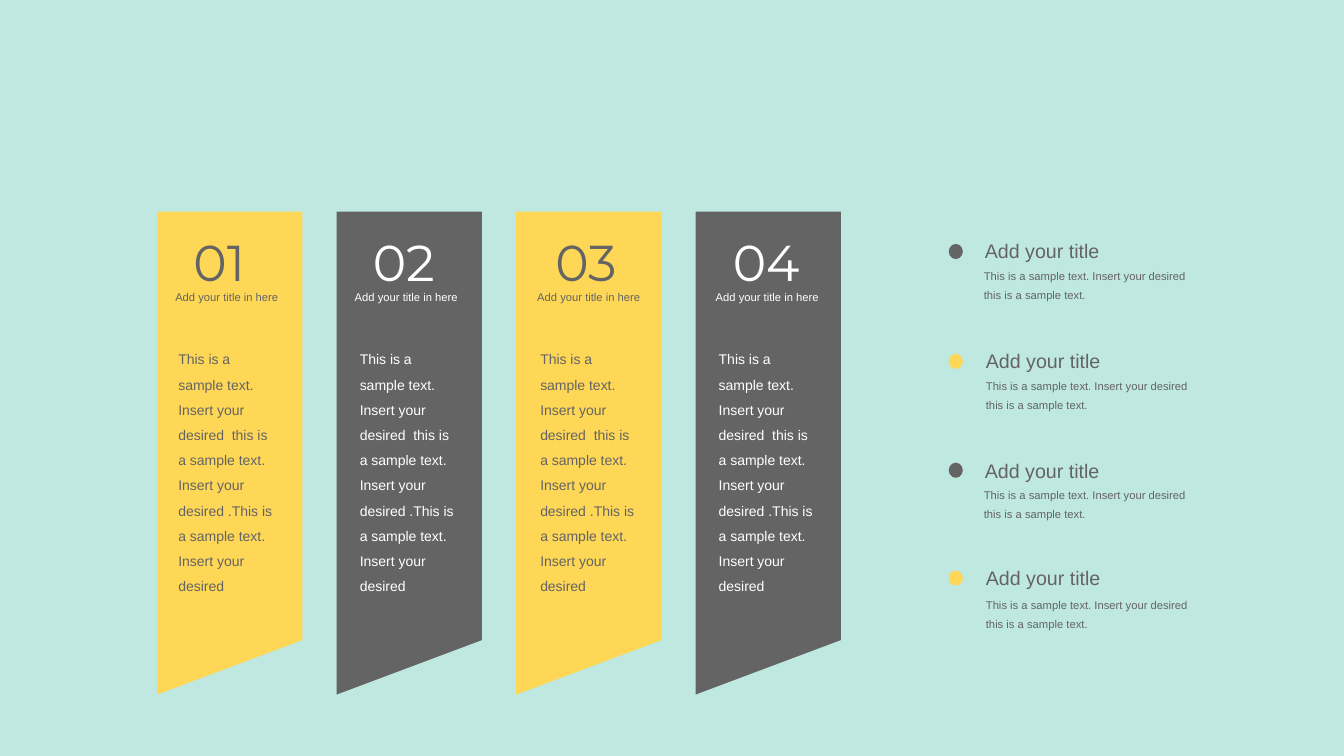
from pptx import Presentation
from pptx.dml.color import RGBColor
from pptx.enum.shapes import MSO_SHAPE as SHAPE
from pptx.enum.text import MSO_ANCHOR as ANCHOR, MSO_AUTO_SIZE as AUTO, PP_ALIGN as ALIGN
from pptx.util import Inches, Pt

MINT = RGBColor(0xBF, 0xE8, 0xE0)
YELLOW = RGBColor(0xFE, 0xD7, 0x56)
GRAY = RGBColor(0x64, 0x64, 0x64)
WHITE = RGBColor(0xFF, 0xFF, 0xFF)

BANNER_TITLE = "Add your title in here"
BANNER_TEXT = ("This is a sample text. Insert your desired  this is a sample text. "
               "Insert your desired .This is a sample text. Insert your desired")
# number, lefts of number, title and text, panel colour, text colour
BANNERS = [
    ("01", 1.82, 1.64, 1.67, YELLOW, GRAY),
    ("02", 3.60, 3.42, 3.47, GRAY, WHITE),
    ("03", 5.41, 5.23, 5.26, YELLOW, GRAY),
    ("04", 7.17, 7.00, 7.03, GRAY, WHITE),
]
ITEM_TITLE = "Add your title"
ITEM_TEXT = "This is a sample text. Insert your desired  this is a sample text."
# dot colour, tops of dot, title and text, lefts of title and text
ITEMS = [
    (GRAY, 2.42, 2.32, 2.56, 9.67, 9.66),
    (YELLOW, 3.51, 3.41, 3.65, 9.68, 9.68),
    (GRAY, 4.59, 4.50, 4.73, 9.67, 9.66),
    (YELLOW, 5.66, 5.57, 5.82, 9.68, 9.68),
]

SLIDE_W, SLIDE_H = 13.33, 7.5
BANNER_LEFT, BANNER_TOP, BANNER_STEP = 1.56, 2.10, 1.78
BANNER_W, SHORT_SIDE, LONG_SIDE = 1.44, 4.25, 4.79
DOT_LEFT = 9.41


def paint(shape, color):
    shape.shadow.inherit = False
    shape.fill.solid()
    shape.fill.fore_color.rgb = color
    shape.line.fill.background()


def add_filled(s, kind, box, color):
    sp = s.shapes.add_shape(kind, *map(Inches, box))
    paint(sp, color)
    return sp


def add_text(s, text, box, size, color, font="Arial", spacing=None, fill=None):
    """Add text, on a filled rectangle if fill is given; it wraps only with a spacing."""
    if fill:
        sp = add_filled(s, SHAPE.RECTANGLE, box, fill)
    else:
        sp = s.shapes.add_textbox(*map(Inches, box))
    tf = sp.text_frame
    layout = {"word_wrap": spacing is not None, "auto_size": AUTO.SHAPE_TO_FIT_TEXT,
              "vertical_anchor": ANCHOR.TOP}
    for name, value in layout.items():
        setattr(tf, name, value)
    p = tf.paragraphs[0]
    p.alignment = ALIGN.LEFT
    if spacing:
        p.line_spacing = Pt(spacing)
    r = p.add_run()
    r.text = text
    for name, value in {"name": font, "size": Pt(size)}.items():
        setattr(r.font, name, value)
    r.font.color.rgb = color


def add_banner(s, index, number, number_x, title_x, text_x, fill, color):
    x, y = BANNER_LEFT + index * BANNER_STEP, BANNER_TOP
    right = x + BANNER_W
    outline = [(right, y + SHORT_SIDE), (x, y + LONG_SIDE), (x, y), (right, y)]
    points = [(Inches(px), Inches(py)) for px, py in outline]
    builder = s.shapes.build_freeform(*points[0])
    builder.add_line_segments(points[1:], close=True)
    paint(builder.convert_to_shape(), fill)
    add_text(s, number, (number_x, 2.24, 0.88, 0.71), 36, color, "Montserrat", fill=fill)
    add_text(s, BANNER_TITLE, (title_x, 2.83, 1.24, 0.24), 8, color, fill=fill)
    add_text(s, BANNER_TEXT, (text_x, 3.35, 1.19, 2.63), 10, color, spacing=18, fill=fill)


def add_item(s, color, dot_y, title_y, text_y, title_x, text_x):
    add_filled(s, SHAPE.OVAL, (DOT_LEFT, dot_y, 0.14, 0.15), color)
    add_text(s, ITEM_TITLE, (title_x, title_y, 1.34, 0.34), 14, GRAY)
    add_text(s, ITEM_TEXT, (text_x, text_y, 2.31, 0.49), 8, GRAY, spacing=14)


def main():
    prs = Presentation()
    prs.slide_width, prs.slide_height = Inches(SLIDE_W), Inches(SLIDE_H)
    s = prs.slides.add_slide(prs.slide_layouts[6])
    backdrop = add_filled(s, SHAPE.RECTANGLE, (0, 0, SLIDE_W, SLIDE_H), MINT)
    backdrop.line.color.rgb = MINT
    backdrop.line.width = Pt(1)
    for i, banner in enumerate(BANNERS):
        add_banner(s, i, *banner)
    for item in ITEMS:
        add_item(s, *item)
    prs.save("out.pptx")


if __name__ == "__main__":
    main()
